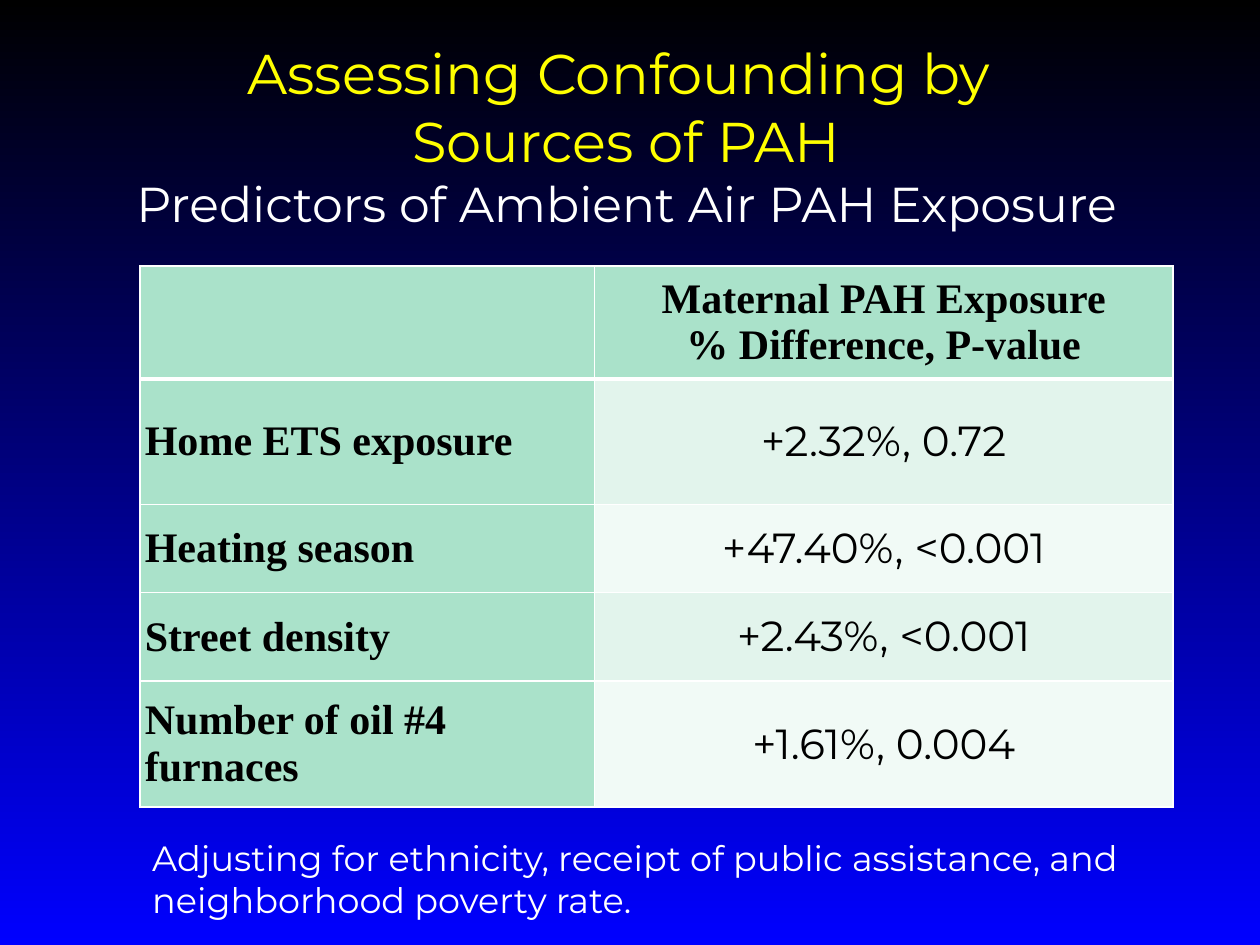
from lxml.etree import SubElement
from pptx import Presentation
from pptx.dml.color import RGBColor
from pptx.enum.text import MSO_ANCHOR, PP_ALIGN
from pptx.oxml.ns import qn
from pptx.util import Cm, Pt

BLACK = RGBColor(0x00, 0x00, 0x00)
BLUE = RGBColor(0x00, 0x00, 0xFF)
WHITE = RGBColor(0xFF, 0xFF, 0xFF)
YELLOW = RGBColor(0xFF, 0xFF, 0x00)
MINT = RGBColor(0xAA, 0xE2, 0xCA)
PALE = RGBColor(0xE2, 0xF4, 0xEC)
FAINT = RGBColor(0xF1, 0xFA, 0xF6)

SANS = "Montserrat"
SERIF = "Times New Roman"
HEAD = "Maternal PAH Exposure\n% Difference, P-value"
ROWS = [
    ("", HEAD),
    ("Home ETS exposure", "+2.32%, 0.72"),
    ("Heating season", "+47.40%, <0.001"),
    ("Street density", "+2.43%, <0.001"),
    ("Number of oil #4 furnaces", "+1.61%, 0.004"),
]
WIDTHS = [Cm(9.16), Cm(11.67)]
HEIGHTS = [Cm(2.28), Cm(2.53), Cm(1.78), Cm(1.78), Cm(2.54)]


def write(frame, text, size=24, font=SANS, color=BLACK, bold=False, align=PP_ALIGN.LEFT):
    """Add each line of text to the frame as a paragraph."""
    for line in text.split("\n"):
        para = frame.paragraphs[-1]
        if para.runs:
            para = frame.add_paragraph()
        para.alignment = align
        run = para.add_run()
        run.text = line
        run.font.size = Pt(size)
        run.font.name = font
        run.font.bold = bold
        run.font.color.rgb = color


def add_box(slide, left, top, width, height):
    """Add a wrapping text box and return its frame."""
    frame = slide.shapes.add_textbox(left, top, width, height).text_frame
    frame.word_wrap = True
    return frame


def edge(cell, base):
    """Draw white borders around a cell, with the given bottom width."""
    props = cell._tc.get_or_add_tcPr()
    for side, width in (("L", 1), ("R", 1), ("T", 1), ("B", base)):
        line = SubElement(props, qn(f"a:ln{side}"), w=str(Pt(width)))
        fill = SubElement(line, qn("a:solidFill"))
        SubElement(fill, qn("a:srgbClr"), val=str(WHITE))


def paint(cell, color):
    """Fill a cell with one colour."""
    cell.fill.solid()
    cell.fill.fore_color.rgb = color


def add_grid(slide):
    """Add the table of exposure predictors."""
    table = slide.shapes.add_table(
        len(ROWS), len(WIDTHS), Cm(2.82), Cm(5.36), sum(WIDTHS), sum(HEIGHTS)
    ).table
    for column, width in zip(table.columns, WIDTHS):
        column.width = width
    for i, (row, height) in enumerate(zip(ROWS, HEIGHTS)):
        table.rows[i].height = height
        for j, text in enumerate(row):
            cell = table.cell(i, j)
            label = i == 0 or j == 0
            cell.vertical_anchor = MSO_ANCHOR.MIDDLE
            cell.margin_left = cell.margin_right = Cm(0.1)
            cell.margin_top = cell.margin_bottom = 0
            edge(cell, 3 if i == 0 else 1)
            paint(cell, MINT if label else PALE if i % 2 else FAINT)
            if text:
                write(cell.text_frame, text, font=SERIF if label else SANS,
                      bold=label, align=PP_ALIGN.CENTER if j else PP_ALIGN.LEFT)


def shade(slide):
    """Give the slide a black to blue background."""
    fill = slide.background.fill
    fill.gradient()
    fill.gradient_angle = 270
    for stop, color in zip(fill.gradient_stops, (BLACK, BLUE)):
        stop.color.rgb = color


def main():
    """Build and save the slide."""
    deck = Presentation()
    deck.slide_width, deck.slide_height = Cm(25.4), Cm(19.05)
    slide = deck.slides.add_slide(deck.slide_layouts[6])
    shade(slide)
    add_grid(slide)
    note = add_box(slide, Cm(2.82), Cm(16.74), Cm(21.16), Cm(1.96))
    write(note, "Adjusting for ethnicity, receipt of public assistance, "
          "and neighborhood poverty rate.", size=20, color=WHITE)
    title = add_box(slide, Cm(1.24), Cm(0.66), Cm(22.78), Cm(4.19))
    write(title, "Assessing Confounding by \nSources of PAH",
          size=32, color=YELLOW, align=PP_ALIGN.CENTER)
    write(title, "Predictors of Ambient Air PAH Exposure",
          size=28, color=WHITE, align=PP_ALIGN.CENTER)
    deck.save("out.pptx")


if __name__ == "__main__":
    main()
